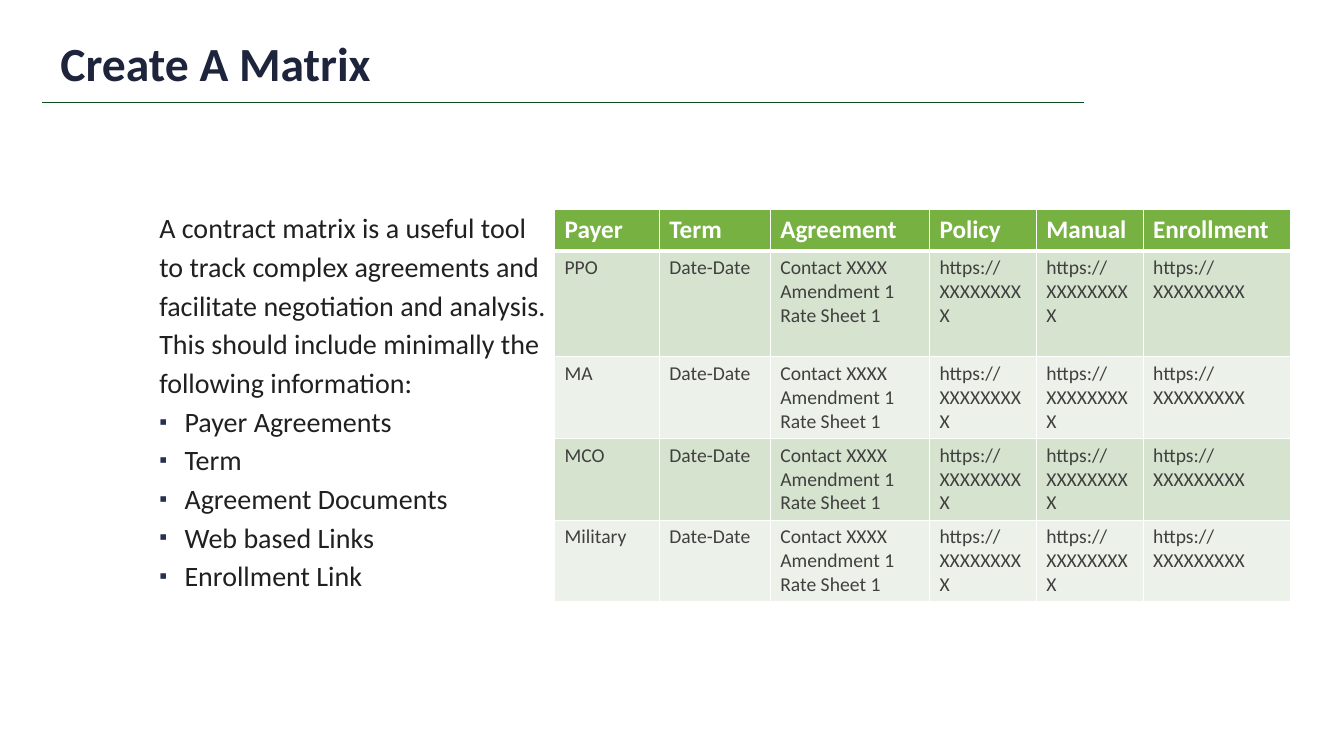
from lxml.etree import SubElement
from pptx import Presentation
from pptx.dml.color import RGBColor
from pptx.enum.shapes import MSO_CONNECTOR as Connector
from pptx.enum.text import MSO_ANCHOR as Anchor, MSO_AUTO_SIZE as AutoSize, PP_ALIGN as Align
from pptx.oxml.ns import qn
from pptx.util import Inches, Pt

INTRODUCTION = [
    "A contract matrix is a useful tool",
    "to track complex agreements and",
    "facilitate negotiation and analysis.",
    "This should include minimally the",
    "following information:",
]
MATRIX_CONTENTS = ["Payer Agreements", "Term", "Agreement Documents", "Web based Links", "Enrollment Link"]
HEADINGS = ["Payer", "Term", "Agreement", "Policy", "Manual", "Enrollment"]
PAYERS = ["PPO", "MA", "MCO", "Military"]
DOCUMENTS = ["Contact XXXX", "Amendment 1", "Rate Sheet 1"]
LINK = ["https://XXXXXXXXX"]
COLUMN_WIDTHS = [7.8, 8.25, 11.85, 7.95, 7.95, 10.95]
ROW_HEIGHTS = [5.47, 14, 10.8, 10.8, 10.8]


def color(value):
    """Turn a hex string into a colour."""
    return RGBColor.from_string(value)


class MatrixSlide:
    """Draw elements on one slide, with lengths in percent of its size."""

    font = "Calibri"
    title_ink, body_ink, cell_ink = "1D243C", "202020", "404040"
    bullet_ink, rule_ink, white = "263050", "0A4E1F", "FFFFFF"
    header_fill, bands = "77B142", ("D6E4CF", "ECF2E9")

    def __init__(self, presentation):
        """Add a slide with a title and a body placeholder."""
        self.width, self.height = presentation.slide_width, presentation.slide_height
        self.slide = presentation.slides.add_slide(presentation.slide_layouts[1])

    def x(self, share):
        """Return a horizontal length."""
        return round(self.width * share / 100)

    def y(self, share):
        """Return a vertical length."""
        return round(self.height * share / 100)

    def place(self, shape, left, top, width, height, anchor):
        """Move a placeholder and prepare its text frame."""
        shape.left, shape.top = self.x(left), self.y(top)
        shape.width, shape.height = self.x(width), self.y(height)
        frame = shape.text_frame
        frame.word_wrap, frame.auto_size = True, AutoSize.NONE
        frame.vertical_anchor = anchor
        return frame

    def add_lines(self, frame, lines, size, ink, bold=False):
        """Add one paragraph a line and return the paragraphs."""
        for number, line in enumerate(lines):
            paragraph = frame.add_paragraph() if number else frame.paragraphs[0]
            paragraph.alignment = Align.LEFT
            run = paragraph.add_run()
            run.text = line
            run.font.name, run.font.size, run.font.bold = self.font, Pt(size), bold
            run.font.color.rgb = color(ink)
        return frame.paragraphs

    def title(self, text, *box):
        """Fill the title placeholder."""
        frame = self.place(self.slide.shapes.title, *box, Anchor.BOTTOM)
        self.add_lines(frame, [text], 34, self.title_ink, True)[0].line_spacing = 0.9

    def rule(self, left, right, top):
        """Draw the horizontal rule under the title."""
        line = self.slide.shapes.add_connector(
            Connector.STRAIGHT, self.x(left), self.y(top), self.x(right), self.y(top))
        line.line.color.rgb, line.line.width = color(self.rule_ink), Pt(1)
        SubElement(line._element.spPr, qn("a:effectLst"))

    def bullet(self, paragraph, marked):
        """Set the indent of a paragraph and its square bullet, if marked."""
        properties = paragraph._p.get_or_add_pPr()
        properties.set("marL", str(Inches(0.26 if marked else 0.01)))
        properties.set("indent", str(Inches(-0.25 if marked else 0)))
        if not marked:
            SubElement(properties, qn("a:buNone"))
            return
        ink = SubElement(properties, qn("a:buClr"))
        SubElement(ink, qn("a:srgbClr"), val=self.bullet_ink)
        SubElement(properties, qn("a:buSzPct"), val="80000")
        SubElement(properties, qn("a:buChar"), char="▪")

    def body(self, introduction, bullets, *box):
        """Fill the body placeholder with plain lines and bullets."""
        frame = self.place(self.slide.placeholders[1], *box, Anchor.TOP)
        paragraphs = self.add_lines(frame, introduction + bullets, 20, self.body_ink)
        for number, paragraph in enumerate(paragraphs):
            paragraph.line_spacing = 0.9
            paragraph.space_before, paragraph.space_after = Pt(0), Pt(6)
            self.bullet(paragraph, number >= len(introduction))

    def border(self, cell, side, width):
        """Give one side of a cell a white border."""
        line = SubElement(cell._tc.get_or_add_tcPr(), qn(f"a:ln{side}"), w=str(Pt(width)))
        fill = SubElement(line, qn("a:solidFill"))
        SubElement(fill, qn("a:srgbClr"), val=self.white)

    def cell(self, cell, lines, row):
        """Fill and colour a table cell by its row."""
        header = row == 0
        for side in "LRTB":
            thick = (side == "B" and header) or (side == "T" and row == 1)
            self.border(cell, side, 3 if thick else 1)
        cell.fill.solid()
        cell.fill.fore_color.rgb = color(self.header_fill if header else self.bands[(row - 1) % 2])
        size, ink = (18, self.white) if header else (14, self.cell_ink)
        self.add_lines(cell.text_frame, lines, size, ink, header)

    def table(self, rows, left, top, widths, heights):
        """Add the table of contracts."""
        table = self.slide.shapes.add_table(
            len(rows), len(widths), self.x(left), self.y(top),
            self.x(sum(widths)), self.y(sum(heights))).table
        for column, width in zip(table.columns, widths):
            column.width = self.x(width)
        for row, (height, cells) in enumerate(zip(heights, rows)):
            table.rows[row].height = self.y(height)
            for column, lines in enumerate(cells):
                self.cell(table.cell(row, column), lines, row)


def main():
    """Build and save the presentation."""
    presentation = Presentation()
    presentation.slide_width, presentation.slide_height = Inches(13.33), Inches(7.5)
    slide = MatrixSlide(presentation)
    slide.rule(3.15, 80.64, 13.6)
    slide.title("Create A Matrix", 3.75, 4, 78, 8.8)
    slide.body(INTRODUCTION, MATRIX_CONTENTS, 11.03, 27.73, 37.5, 60.13)
    rows = [[[heading] for heading in HEADINGS]]
    rows += [[[payer], ["Date-Date"], DOCUMENTS, LINK, LINK, LINK] for payer in PAYERS]
    slide.table(rows, 41.26, 27.73, COLUMN_WIDTHS, ROW_HEIGHTS)
    presentation.save("out.pptx")


if __name__ == "__main__":
    main()
